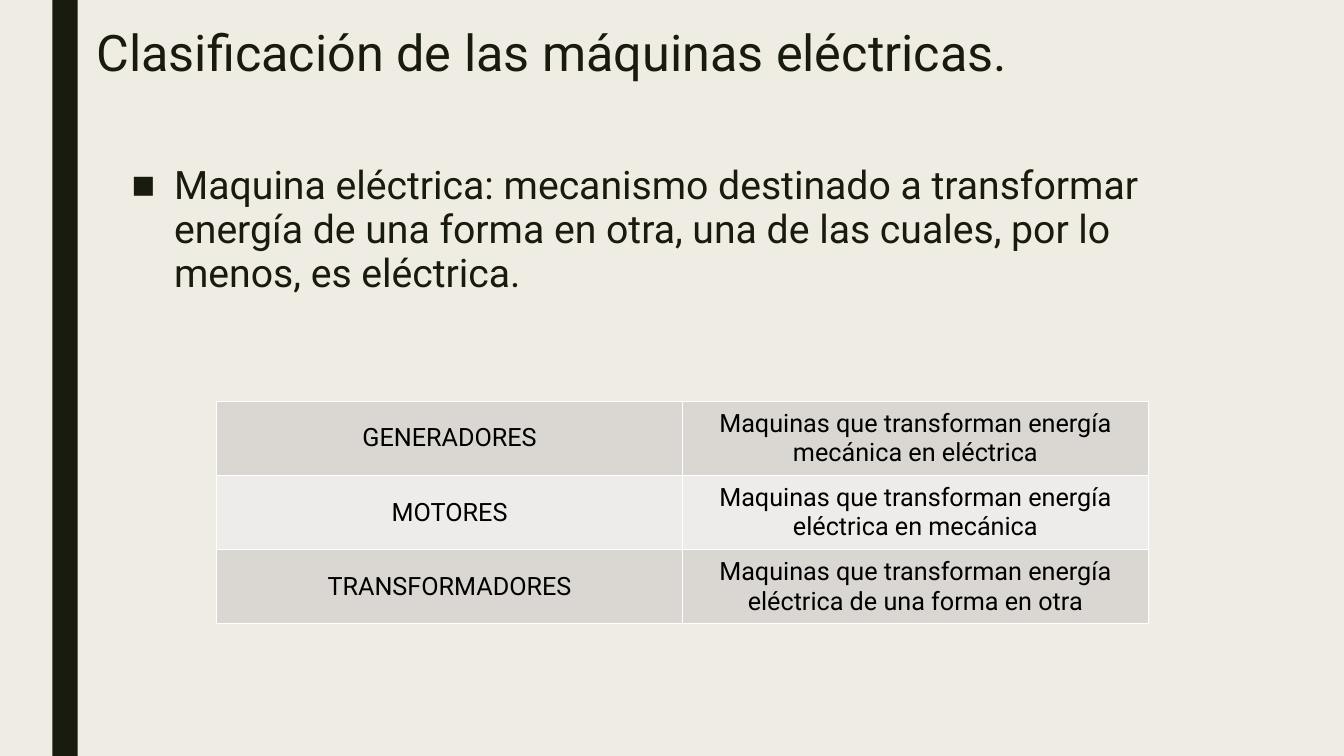
from dataclasses import dataclass

from lxml import etree
from pptx import Presentation
from pptx.dml.color import RGBColor
from pptx.enum import shapes, text
from pptx.oxml import ns
from pptx.util import Cm, Pt

FONT = "Roboto"
CREAM = RGBColor(0xEF, 0xED, 0xE3)
INK = RGBColor(0x19, 0x1B, 0x0E)
BLACK = RGBColor(0, 0, 0)
WHITE = RGBColor(0xFF, 0xFF, 0xFF)
BAND_DARK = RGBColor(0xDA, 0xD7, 0xD2)
BAND_LIGHT = RGBColor(0xED, 0xEC, 0xEA)


@dataclass
class Machine:
    name: str
    purpose: str


MACHINES = [
    Machine("GENERADORES", "Maquinas que transforman energía mecánica en eléctrica"),
    Machine("MOTORES", "Maquinas que transforman energía eléctrica en mecánica"),
    Machine("TRANSFORMADORES", "Maquinas que transforman energía eléctrica de una forma en otra"),
]


def write(tf, content: str, *, size: float, color: RGBColor,
          align=text.PP_ALIGN.LEFT, spacing: float = 1.0):
    p = tf.paragraphs[0]
    p.alignment = align
    p.line_spacing = spacing
    r = p.add_run()
    r.text = content
    r.font.name = FONT
    r.font.size = Pt(size)
    r.font.color.rgb = color
    return p


def add_bullet(p, char: str, indent: int) -> None:
    pPr = p._p.get_or_add_pPr()
    pPr.set("marL", str(indent))
    pPr.set("indent", str(-indent))
    etree.SubElement(pPr, ns.qn("a:buFont")).set("typeface", "Arial")
    etree.SubElement(pPr, ns.qn("a:buChar")).set("char", char)


def add_borders(cell, color: RGBColor, width: int) -> None:
    tcPr = cell._tc.get_or_add_tcPr()
    for side in ("lnL", "lnR", "lnT", "lnB"):
        ln = etree.SubElement(tcPr, ns.qn(f"a:{side}"))
        ln.set("w", str(width))
        fill = etree.SubElement(ln, ns.qn("a:solidFill"))
        etree.SubElement(fill, ns.qn("a:srgbClr")).set("val", str(color))


def add_side_bar(s) -> None:
    bar = s.shapes.add_shape(shapes.MSO_SHAPE.RECTANGLE, Cm(1.32), 0, Cm(0.64), Cm(19.05))
    bar.shadow.inherit = False
    bar.fill.solid()
    bar.fill.fore_color.rgb = INK
    bar.line.fill.background()


def add_title(s, content: str) -> None:
    title = s.shapes.title
    title.left, title.top, title.width, title.height = Cm(2.18), Cm(0.53), Cm(25.86), Cm(1.73)
    tf = title.text_frame
    tf.auto_size = text.MSO_AUTO_SIZE.NONE
    tf.vertical_anchor = text.MSO_ANCHOR.MIDDLE
    write(tf, content, size=36, color=INK, spacing=0.89)


def add_definition(s, content: str) -> None:
    tf = s.shapes.add_textbox(Cm(3.07), Cm(4.01), Cm(26.67), Cm(9.96)).text_frame
    tf.word_wrap = True
    p = write(tf, content, size=28, color=INK, spacing=0.94)
    p.space_before, p.space_after = Pt(10), Pt(2)
    add_bullet(p, "■", Cm(1.07))


def add_machine_table(s, machines: list[Machine]) -> None:
    frame = s.shapes.add_table(len(machines), 2, Cm(5.46), Cm(10.11),
                               Cm(23.48), Cm(1.87) * len(machines))
    table = frame.table
    table.first_row = False
    for i, machine in enumerate(machines):
        for j, content in enumerate((machine.name, machine.purpose)):
            cell = table.cell(i, j)
            add_borders(cell, WHITE, Pt(1))
            cell.fill.solid()
            cell.fill.fore_color.rgb = BAND_LIGHT if i % 2 else BAND_DARK
            cell.vertical_anchor = text.MSO_ANCHOR.MIDDLE
            write(cell.text_frame, content, size=18, color=BLACK, align=text.PP_ALIGN.CENTER)


def main() -> None:
    prs = Presentation()
    prs.slide_width, prs.slide_height = Cm(33.87), Cm(19.05)
    s = prs.slides.add_slide(prs.slide_layouts[5])
    s.background.fill.solid()
    s.background.fill.fore_color.rgb = CREAM
    add_side_bar(s)
    add_title(s, "Clasificación de las máquinas eléctricas.")
    add_definition(s, "Maquina eléctrica: mecanismo destinado a transformar energía de una "
                      "forma en otra, una de las cuales, por lo menos, es eléctrica.")
    add_machine_table(s, MACHINES)
    prs.save("out.pptx")


if __name__ == "__main__":
    main()
